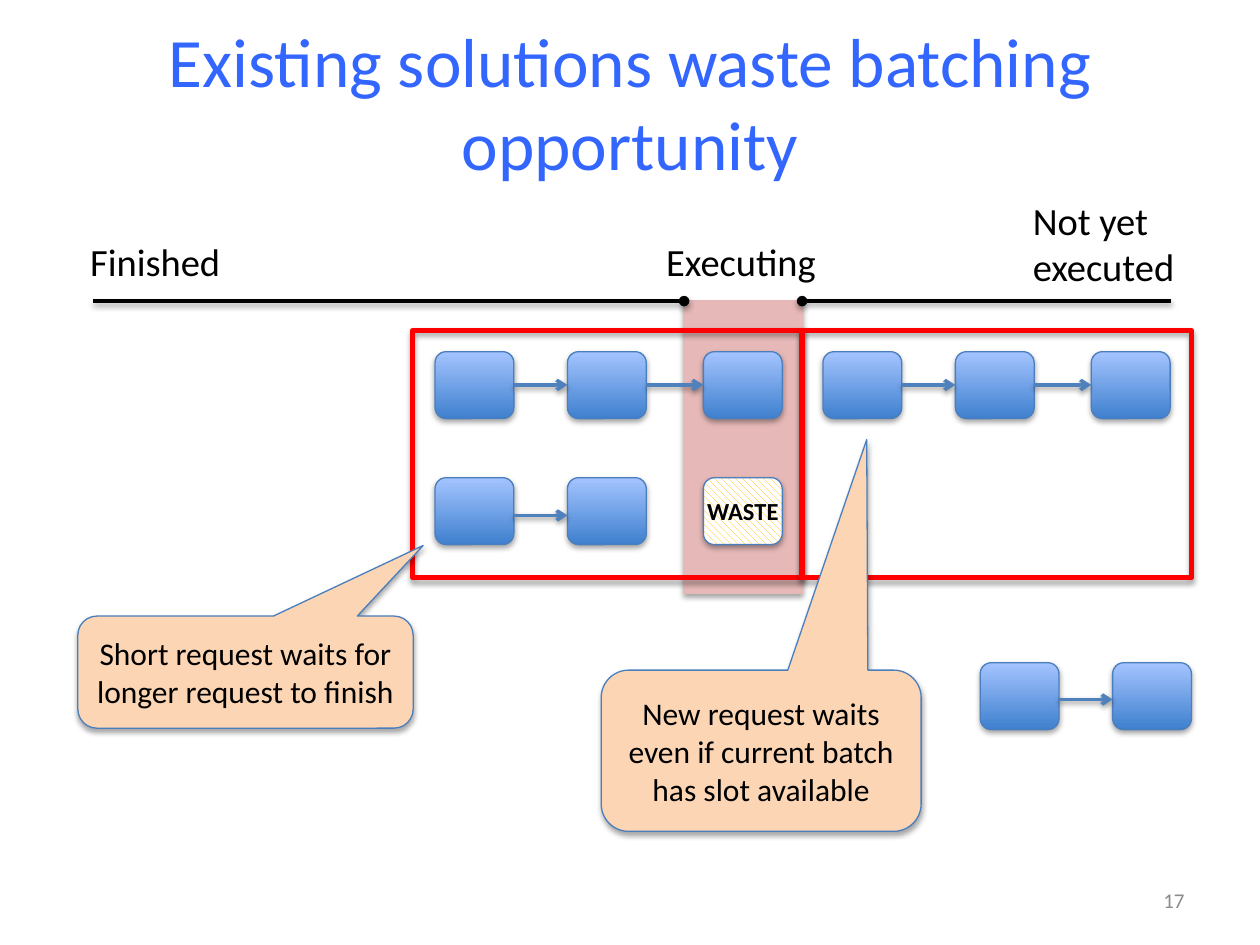
"""Build the slide about batching opportunities wasted by existing solutions."""
from dataclasses import dataclass

from pptx import Presentation
from pptx.dml.color import RGBColor
from pptx.enum.dml import MSO_PATTERN
from pptx.enum.shapes import MSO_CONNECTOR, MSO_SHAPE
from pptx.enum.text import MSO_ANCHOR, MSO_AUTO_SIZE, PP_ALIGN
from pptx.oxml import parse_xml
from pptx.oxml.ns import nsdecls, qn
from pptx.util import Cm, Pt

RECT, ROUNDED = MSO_SHAPE.RECTANGLE, MSO_SHAPE.ROUNDED_RECTANGLE
CALLOUT = MSO_SHAPE.ROUNDED_RECTANGULAR_CALLOUT
STRAIGHT = MSO_CONNECTOR.STRAIGHT
HATCH = MSO_PATTERN.WIDE_DOWNWARD_DIAGONAL
MIDDLE, TOP = MSO_ANCHOR.MIDDLE, MSO_ANCHOR.TOP
LEFT, CENTER, RIGHT = PP_ALIGN.LEFT, PP_ALIGN.CENTER, PP_ALIGN.RIGHT
FIT_SHAPE, NO_FIT = MSO_AUTO_SIZE.SHAPE_TO_FIT_TEXT, MSO_AUTO_SIZE.NONE

OUTLINE = "4B7EBC"
BOX_W, BOX_H = 1.59, 1.35
STEPS = (0, 2.67, 5.41)
ROW_Y = 7.09
AXIS_Y = 6.07
EXEC_X, EXEC_W = 13.79, 2.38
EXEC_END = EXEC_X + EXEC_W
FRAME_W, FRAME_H = 7.85, 4.98


@dataclass
class Request:
    x: float
    y: float
    boxes: int
    arrow_dy: float


@dataclass
class Label:
    text: str
    x: float
    y: float
    w: float
    h: float


@dataclass
class Callout(Label):
    adj: tuple[float, float, float]


REQUESTS = (
    Request(8.77, ROW_Y, 3, 0.67),
    Request(8.77, 9.63, 2, 0.76),
    Request(16.59, ROW_Y, 3, 0.67),
    Request(19.76, 13.36, 2, 0.74),
)
LABELS = (
    Label("Executing", 13.18, 4.67, 3.56, 1.19),
    Label("Finished", 1.57, 4.67, 3.15, 1.19),
    Label("Not yet\nexecuted", 20.57, 3.84, 3.4, 2.13),
)
CALLOUTS = (
    Callout("Short request waits for longer request to finish",
            1.57, 12.42, 6.76, 2.26, (0.53, -1.13, 0.17)),
    Callout("New request waits even if current batch has slot available",
            12.12, 13.51, 6.45, 3.25, (0.33, -1.93, 0.17)),
)


def rgb(color: str) -> RGBColor:
    return RGBColor.from_string(color)


def add_shadow(sp, alpha: int = 35, dist: int = 23000) -> None:
    sp._element.spPr.append(parse_xml(
        f'<a:effectLst {nsdecls("a")}><a:outerShdw blurRad="40000" dist="{dist}" '
        'dir="5400000" rotWithShape="0"><a:srgbClr val="000000">'
        f'<a:alpha val="{alpha * 1000}"/></a:srgbClr></a:outerShdw></a:effectLst>'))


def write(sp, text: str, size: float, color: str = "000000", align=CENTER,
          bold: bool = False, **frame) -> None:
    tf = sp.text_frame
    for name, value in frame.items():
        setattr(tf, name, value)
    tf.text = text
    for p in tf.paragraphs:
        p.alignment = align
        for r in p.runs:
            font = {"name": "Calibri", "size": Pt(size), "bold": bold}
            for name, value in font.items():
                setattr(r.font, name, value)
            r.font.color.rgb = rgb(color)


def add_box(shapes, kind, x: float, y: float, w: float, h: float,
            fill: str | None = None, line: str = OUTLINE, width: float = 0.75):
    sp = shapes.add_shape(kind, Cm(x), Cm(y), Cm(w), Cm(h))
    if fill:
        sp.fill.solid()
        sp.fill.fore_color.rgb = rgb(fill)
    else:
        sp.fill.background()
    sp.line.color.rgb = rgb(line)
    sp.line.width = Pt(width)
    add_shadow(sp)
    return sp


def add_line(shapes, x1: float, x2: float, y: float, color: str, end: str) -> None:
    cx = shapes.add_connector(STRAIGHT, Cm(x1), Cm(y), Cm(x2), Cm(y))
    cx.line.color.rgb = rgb(color)
    cx.line.width = Pt(2)
    ln = cx._element.spPr.find(qn("a:ln"))
    ln.append(parse_xml(f'<a:tailEnd {nsdecls("a")} type="{end}"/>'))
    add_shadow(cx, 38, 20000)


def add_request(shapes, req: Request) -> None:
    grp = shapes.add_group_shape().shapes
    xs = [req.x + step for step in STEPS[:req.boxes]]
    for x in xs:
        sp = add_box(grp, ROUNDED, x, req.y, BOX_W, BOX_H)
        sp.fill.gradient()
        sp.fill.gradient_angle = 90
        for stop, color in zip(sp.fill.gradient_stops, ("3F80CE", "A4C4FF")):
            stop.color.rgb = rgb(color)
    for x, after in zip(xs, xs[1:]):
        add_line(grp, x + BOX_W, after, req.y + req.arrow_dy, "4F81BD", "arrow")


def add_text(shapes, label: Label, size: float, **style) -> None:
    sp = shapes.add_textbox(Cm(label.x), Cm(label.y), Cm(label.w), Cm(label.h))
    write(sp, label.text, size, **style)


def add_waste(shapes) -> None:
    sp = add_box(shapes, ROUNDED, 14.18, 9.63, BOX_W, BOX_H)
    sp.fill.patterned()
    sp.fill.pattern = HATCH
    sp.fill.fore_color.rgb = rgb("FFC000")
    sp.fill.back_color.rgb = rgb("FFFFFF")
    margins = dict.fromkeys(
        ("margin_left", "margin_top", "margin_right", "margin_bottom"), 0)
    write(sp, "WASTE", 14, bold=True, vertical_anchor=MIDDLE, word_wrap=True, **margins)


def main() -> None:
    prs = Presentation()
    prs.slide_width, prs.slide_height = Cm(25.4), Cm(19.05)
    shapes = prs.slides.add_slide(prs.slide_layouts[5]).shapes

    title = shapes.title
    place = {"left": 1.27, "top": 0.46, "width": 22.86, "height": 3.18}
    for name, value in place.items():
        setattr(title, name, Cm(value))
    write(title, "Existing solutions waste batching opportunity", 39.6, "3366FF",
          vertical_anchor=MIDDLE, word_wrap=True, auto_size=NO_FIT)

    add_box(shapes, RECT, EXEC_X, AXIS_Y, EXEC_W, 5.89, "E6B9B8", "E6B9B8")
    add_line(shapes, 23.6, EXEC_END, AXIS_Y, "000000", "oval")
    add_line(shapes, 1.88, EXEC_X, AXIS_Y, "000000", "oval")
    for req in REQUESTS:
        add_request(shapes, req)
    for x in (EXEC_END - FRAME_W, EXEC_END):
        add_box(shapes, RECT, x, 6.67, FRAME_W, FRAME_H, line="FF0000", width=3)
    add_waste(shapes)

    for label in LABELS:
        add_text(shapes, label, 22, align=LEFT, vertical_anchor=TOP,
                 word_wrap=False, auto_size=FIT_SHAPE)
    add_text(shapes, Label("17", 18.2, 17.65, 5.93, 1.01), 12, color="8C8C8C",
             align=RIGHT, vertical_anchor=MIDDLE, word_wrap=True)
    for note in CALLOUTS:
        sp = add_box(shapes, CALLOUT, note.x, note.y, note.w, note.h, "FCD5B5")
        for i, value in enumerate(note.adj):
            sp.adjustments[i] = value
        write(sp, note.text, 18, vertical_anchor=MIDDLE, word_wrap=True)

    prs.save("out.pptx")


if __name__ == "__main__":
    main()
